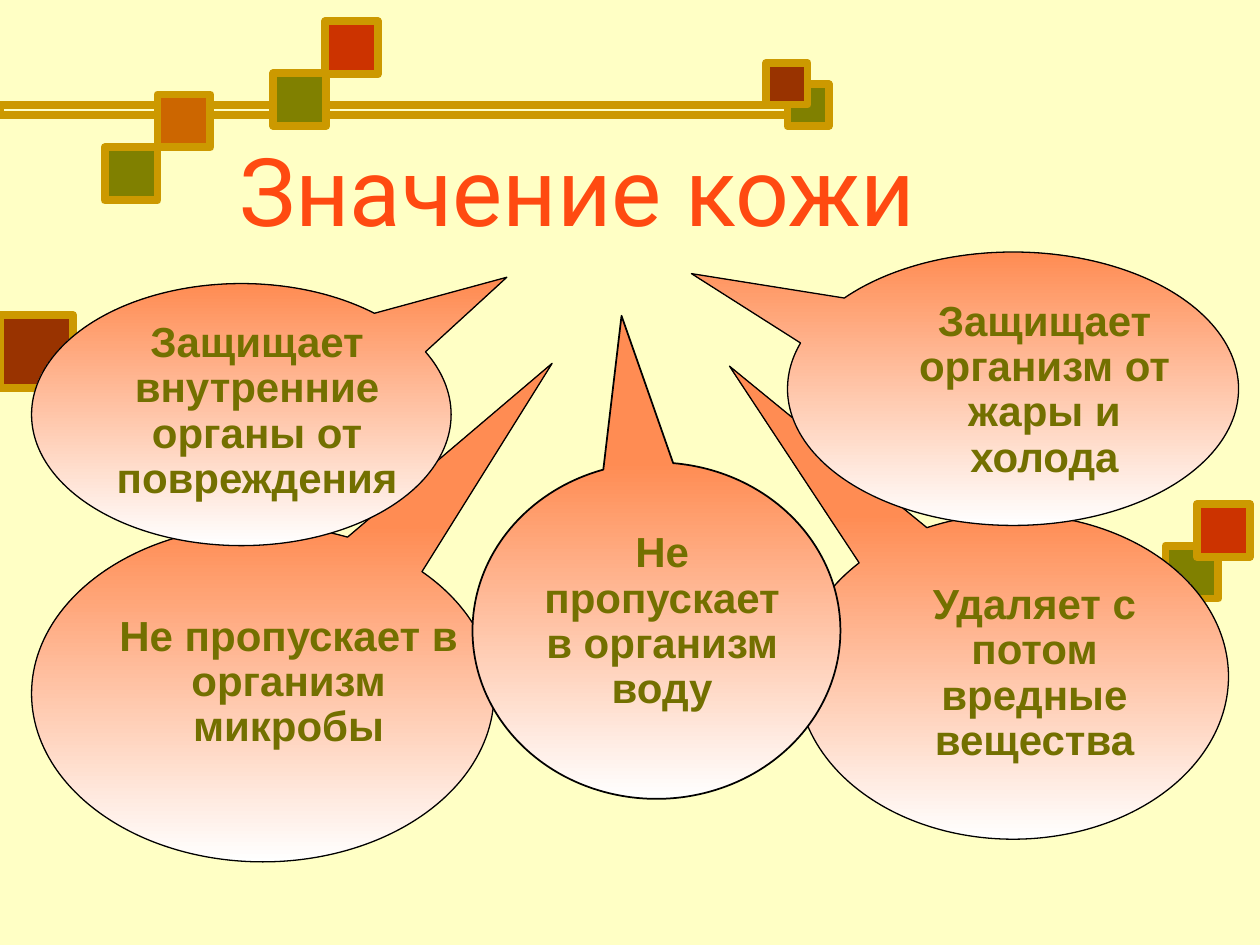
from pptx import Presentation
from pptx.dml.color import RGBColor
from pptx.enum.shapes import MSO_SHAPE as Preset
from pptx.enum.text import MSO_ANCHOR as Anchor, MSO_AUTO_SIZE as AutoSize, PP_ALIGN as Align
from pptx.util import Inches, Pt

CREAM = RGBColor(0xFF, 0xFF, 0xC5)
GOLD = RGBColor(0xCC, 0x99, 0x00)
GREEN = RGBColor(0x80, 0x80, 0x00)
BROWN = RGBColor(0x99, 0x33, 0x00)
RED = RGBColor(0xCC, 0x33, 0x00)
ORANGE = RGBColor(0xCC, 0x66, 0x00)
PEACH = RGBColor(0xFF, 0x8C, 0x53)
WHITE = RGBColor(0xFF, 0xFF, 0xFF)
BLACK = RGBColor(0x00, 0x00, 0x00)
TITLE_RED = RGBColor(0xFF, 0x4A, 0x11)
OLIVE = RGBColor(0x73, 0x70, 0x00)

SQUARES = [
    (6.25, 0.67, 0.33, GREEN),
    (6.08, 0.5, 0.33, BROWN),
    (9.25, 4.33, 0.42, GREEN),
    (9.5, 4, 0.42, RED),
    (0, 2.5, 0.58, BROWN),
    (2.17, 0.58, 0.42, GREEN),
    (0.83, 1.17, 0.42, GREEN),
    (1.25, 0.75, 0.42, ORANGE),
    (2.58, 0.17, 0.42, RED),
]

CALLOUTS = [
    ((6.33, 4.08, 3.42, 2.58), (0.658, 0.955), 0.75),
    ((6.25, 2, 3.58, 2.17), (0.713, 0.421), 0.75),
    ((0.25, 4.17, 3.67, 2.67), (-0.626, 0.982), 0.75),
    ((3.75, 3.67, 2.92, 2.67), (0.095, 0.936), 1),
    ((0.25, 2.25, 3.33, 2.08), (-0.633, 0.524), 0.75),
]

LABELS = [
    ((0.75, 2.5, 2.58, 1.54), "Защищает внутренние органы от повреждения"),
    ((0.83, 4.83, 2.92, 1.18), "Не пропускает в организм микробы"),
    ((4.17, 4.17, 2.17, 1.54), "Не пропускает в организм воду"),
    ((7, 2.33, 2.58, 1.54), "Защищает организм от жары и холода"),
    ((6.92, 4.58, 2.58, 1.54), "Удаляет с потом вредные вещества"),
]


def add_outlined(page, preset, bounds, line_color, line_width):
    """Add a preset shape with a plain outline and no shadow."""
    shape = page.shapes.add_shape(preset, *map(Inches, bounds))
    shape.shadow.inherit = False
    shape.line.color.rgb = line_color
    shape.line.width = Pt(line_width)
    return shape


def add_bar(page):
    """Add the hollow bar behind the upper squares."""
    bar = add_outlined(page, Preset.RECTANGLE, (0, 0.83, 6.42, 0.08), GOLD, 4.5)
    bar.fill.background()


def add_square(page, left, top, side, color):
    """Add a coloured square with a gold frame."""
    square = add_outlined(page, Preset.RECTANGLE, (left, top, side, side), GOLD, 4.5)
    square.fill.solid()
    square.fill.fore_color.rgb = color


def add_callout(page, bounds, tail, line_width):
    """Add an upturned oval callout that fades from peach to white."""
    callout = add_outlined(page, Preset.OVAL_CALLOUT, bounds, BLACK, line_width)
    callout.rotation = 180
    for index, offset in enumerate(tail):
        callout.adjustments[index] = offset
    callout.fill.gradient()
    callout.fill.gradient_angle = 270
    for stop, color, position in zip(callout.fill.gradient_stops, (WHITE, PEACH), (0, 1)):
        stop.color.rgb = color
        stop.position = position


def format_para(para, name, size, color, bold, align, line_spacing):
    """Set the font and spacing of a paragraph."""
    para.font.name = name
    para.font.size = Pt(size)
    para.font.color.rgb = color
    para.font.bold = bold
    para.alignment = align
    para.line_spacing = line_spacing
    para.space_before = Pt(size * 0.2)


def set_title(page, text):
    """Place and format the slide title."""
    title = page.shapes.title
    title.left, title.top, title.width, title.height = map(Inches, (0.33, 1.17, 9.42, 1.58))
    frame = title.text_frame
    frame.text = text
    frame.auto_size = AutoSize.NONE
    frame.vertical_anchor = Anchor.TOP
    frame.margin_left = Inches(1.57)
    format_para(frame.paragraphs[0], "Roboto", 54, TITLE_RED, False, Align.LEFT, 0.8)


def add_label(page, bounds, text):
    """Add the centred wording of a callout."""
    box = page.shapes.add_textbox(*map(Inches, bounds))
    frame = box.text_frame
    frame.word_wrap = True
    frame.auto_size = AutoSize.SHAPE_TO_FIT_TEXT
    frame.text = text
    format_para(frame.paragraphs[0], "Arial", 24, OLIVE, True, Align.CENTER, 0.9)


def main():
    """Build the slide and save it."""
    deck = Presentation()
    deck.slide_width, deck.slide_height = Inches(10), Inches(7.5)
    page = deck.slides.add_slide(deck.slide_layouts[5])
    page.background.fill.solid()
    page.background.fill.fore_color.rgb = CREAM
    set_title(page, "Значение кожи")
    add_bar(page)
    for square in SQUARES:
        add_square(page, *square)
    for callout in CALLOUTS:
        add_callout(page, *callout)
    for label in LABELS:
        add_label(page, *label)
    deck.save("out.pptx")


if __name__ == "__main__":
    main()
